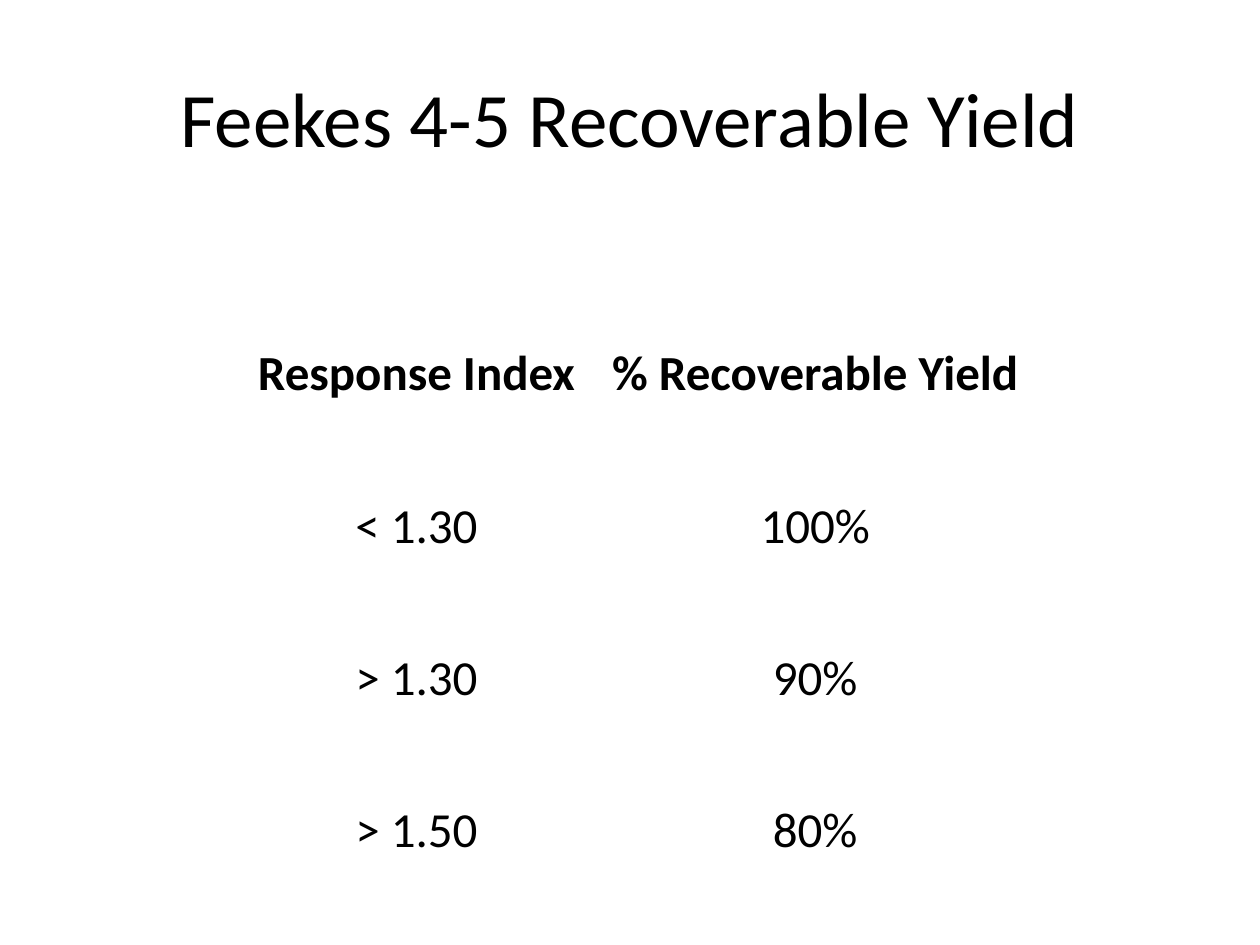
from pptx import Presentation
from pptx.dml.color import RGBColor
from pptx.enum.text import MSO_ANCHOR, PP_ALIGN
from pptx.util import Inches, Pt

CENTER = PP_ALIGN.CENTER
MIDDLE = MSO_ANCHOR.MIDDLE
BOTTOM = MSO_ANCHOR.BOTTOM

TITLE = "Feekes 4-5 Recoverable Yield"
ROWS = [
    ("Response Index", "% Recoverable Yield"),
    ("< 1.30", "100%"),
    ("> 1.30", "90%"),
    ("> 1.50", "80%"),
]
WIDTHS = (2.77, 3.56)
HEIGHT = 4.83
THEME = {
    "font": "Calibri",
    "ink": RGBColor(0, 0, 0),
    "paper": RGBColor(255, 255, 255),
    "title": 44,
    "cell": 28,
}


def write(frame, text, size, bold=False):
    para = frame.paragraphs[0]
    para.alignment = CENTER
    run = para.add_run()
    run.text = text
    font = run.font
    font.name = THEME["font"]
    font.size = Pt(size)
    font.bold = bold
    font.color.rgb = THEME["ink"]


def add_title(slide):
    title = slide.shapes.title
    title.left, title.top = Inches(0.5), Inches(0.3)
    title.width, title.height = Inches(9), Inches(1.25)
    title.text_frame.vertical_anchor = MIDDLE
    write(title.text_frame, TITLE, THEME["title"])


def add_yields(slide):
    table = slide.shapes.add_table(
        len(ROWS), len(WIDTHS),
        Inches(1.92), Inches(2), Inches(sum(WIDTHS)), Inches(HEIGHT),
    ).table
    table.first_row = True
    table.horz_banding = False
    for column, width in zip(table.columns, WIDTHS):
        column.width = Inches(width)
    for r, row in enumerate(ROWS):
        for c, text in enumerate(row):
            cell = table.cell(r, c)
            cell.fill.background()
            cell.vertical_anchor = BOTTOM
            cell.margin_left = cell.margin_right = cell.margin_top = Inches(0.01)
            cell.margin_bottom = 0
            write(cell.text_frame, text, THEME["cell"], bold=r == 0)


def main():
    deck = Presentation()
    deck.slide_width, deck.slide_height = Inches(10), Inches(7.5)
    slide = deck.slides.add_slide(deck.slide_layouts[5])
    slide.background.fill.solid()
    slide.background.fill.fore_color.rgb = THEME["paper"]
    add_title(slide)
    add_yields(slide)
    deck.save("out.pptx")


if __name__ == "__main__":
    main()
